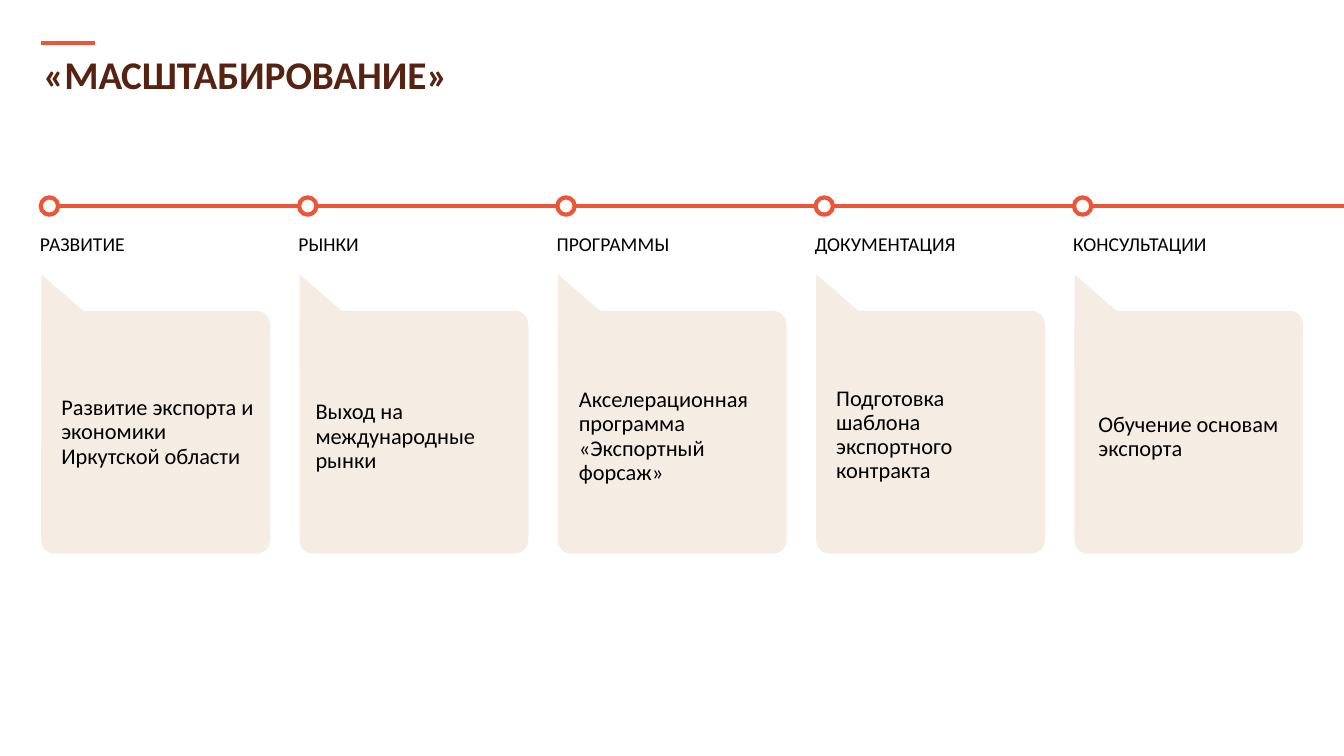
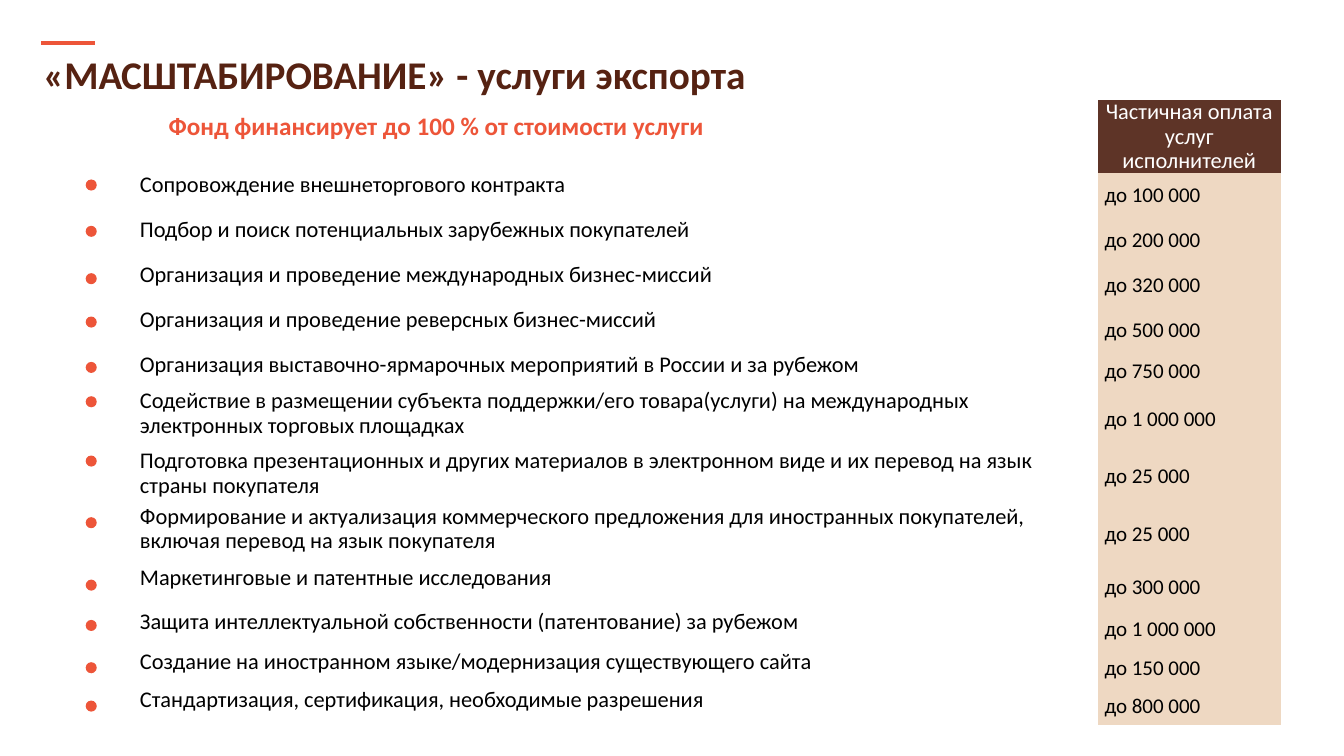
from dataclasses import dataclass

from pptx import Presentation
from pptx.dml.color import RGBColor as Rgb
from pptx.enum.shapes import MSO_CONNECTOR as Connector, MSO_SHAPE as Shape
from pptx.enum.text import MSO_ANCHOR as Anchor, PP_ALIGN as Align
from pptx.oxml.ns import qn
from pptx.oxml.xmlchemy import OxmlElement
from pptx.util import Pt


# Colours, font and type sizes
@dataclass(frozen=True)
class Theme:
    font: str = "Calibri"
    accent: str = "ED5539"
    title: str = "562212"
    ink: str = "000000"
    white: str = "FFFFFF"
    card: str = "F5ECE3"
    header: str = "5E3427"
    amount: str = "EED8C2"
    title_size: float = 28
    subtitle_size: float = 18
    body_size: float = 16
    amount_size: float = 15
    label_size: float = 14
    line_width: float = 3
    spacing: float = 0.9


THEME = Theme()
NO_GRID_STYLE = "{2D5ABB26-0587-4C30-8999-92F81FD0307C}"


def apply(target, values):
    for name, value in values.items():
        setattr(target, name, value)


class Builder:
    """Holds the deck, the theme and the page being drawn."""

    def __init__(self, theme):
        self.theme = theme
        self.deck = Presentation()
        apply(self.deck, {"slide_width": Pt(960), "slide_height": Pt(540)})
        self.page = None

    def new_page(self, title):
        theme = self.theme
        self.page = self.deck.slides.add_slide(self.deck.slide_layouts[6])
        self.line(29.5, 31, 67.7, 31)
        self.text(title, 23.8, 36, 752, 36, size=theme.title_size,
                  color=theme.title, bold=True, spacing=theme.spacing)

    def fill_text(self, frame, text, size, color, bold=False, spacing=None,
                  align=Align.LEFT):
        """Fill a text frame, one paragraph for each line of text."""
        for index, words in enumerate(text.split("\n")):
            para = frame.add_paragraph() if index else frame.paragraphs[0]
            apply(para, {"alignment": align, "line_spacing": spacing})
            span = para.add_run()
            span.text = words
            apply(span.font, {"name": self.theme.font, "size": Pt(size), "bold": bold})
            span.font.color.rgb = Rgb.from_string(color)

    def text(self, text, left, top, width, height, anchor=Anchor.TOP, **style):
        box = self.page.shapes.add_textbox(Pt(left), Pt(top), Pt(width), Pt(height))
        apply(box.text_frame, {"word_wrap": True, "vertical_anchor": anchor})
        self.fill_text(box.text_frame, text, **style)

    def line(self, x1, y1, x2, y2):
        line = self.page.shapes.add_connector(
            Connector.STRAIGHT, Pt(x1), Pt(y1), Pt(x2), Pt(y2))
        line.line.color.rgb = Rgb.from_string(self.theme.accent)
        line.line.width = Pt(self.theme.line_width)
        line._element.spPr.append(OxmlElement("a:effectLst"))

    def shape(self, kind, left, top, width, height, fill, outline=None, parent=None):
        shapes = (parent or self.page).shapes
        shape = shapes.add_shape(kind, Pt(left), Pt(top), Pt(width), Pt(height))
        shape.shadow.inherit = False
        shape.fill.solid()
        shape.fill.fore_color.rgb = Rgb.from_string(fill)
        if outline:
            shape.line.color.rgb = Rgb.from_string(outline)
            shape.line.width = Pt(self.theme.line_width)
        else:
            shape.line.fill.background()
        return shape

    def callout(self, left, top, width, height):
        """A rounded card with a pointer at its upper left corner."""
        color = self.theme.card
        group = self.page.shapes.add_group_shape()
        self.shape(Shape.RIGHT_TRIANGLE, left, top - 26, 75.6, 65.5, color, parent=group)
        card = self.shape(Shape.ROUNDED_RECTANGLE, left, top, width, height,
                          color, parent=group)
        card.adjustments[0] = 0.06

    def table(self, left, top, widths, heights):
        frame = self.page.shapes.add_table(
            len(heights), len(widths), Pt(left), Pt(top), Pt(sum(widths)), Pt(sum(heights)))
        table = frame.table
        apply(table, {"first_row": False, "horz_banding": False})
        table._tbl.tblPr.find(qn("a:tableStyleId")).text = NO_GRID_STYLE
        for column, width in zip(table.columns, widths):
            column.width = Pt(width)
        for row, height in zip(table.rows, heights):
            row.height = Pt(height)
        return table

    def cell(self, cell, text="", fill=None, anchor=Anchor.TOP, **style):
        apply(cell, {"margin_left": Pt(5), "margin_right": Pt(5), "margin_top": 0,
                     "margin_bottom": 0, "vertical_anchor": anchor})
        if fill:
            cell.fill.solid()
            cell.fill.fore_color.rgb = Rgb.from_string(fill)
        else:
            cell.fill.background()
        if text:
            self.fill_text(cell.text_frame, text, spacing=self.theme.spacing, **style)


# Stage label, card text, text indent, text width, text middle
STAGES = [
    ("РАЗВИТИЕ", "Развитие экспорта и экономики\nИркутской области", 7.2, 156, 309),
    ("РЫНКИ", "Выход на международные рынки", 4.3, 156, 312),
    ("ПРОГРАММЫ", "Акселерационная программа «Экспортный форсаж»", 7.9, 148, 312),
    ("ДОКУМЕНТАЦИЯ", "Подготовка шаблона экспортного контракта", 7.2, 148, 311),
    ("КОНСУЛЬТАЦИИ", "Обучение основам экспорта", 10, 146, 312.5),
]

# Service, payment limit, row height, top of the dot
SERVICES = [
    ("Сопровождение внешнеторгового контракта", "до 100 000", 32.2, 128.2),
    ("Подбор и поиск потенциальных зарубежных покупателей", "до 200 000", 32.2, 161.3),
    ("Организация и проведение международных бизнес-миссий", "до 320 000", 32.2, 195.1),
    ("Организация и проведение реверсных бизнес-миссий", "до 500 000", 32.2, 226.1),
    ("Организация выставочно-ярмарочных мероприятий в России и за рубежом",
     "до 750 000", 25.6, 258.5),
    ("Содействие в размещении субъекта поддержки/его товара(услуги) на международных "
     "электронных торговых площадках", "до 1 000 000", 42.9, 283),
    ("Подготовка презентационных и других материалов в электронном виде и их перевод "
     "на язык страны покупателя", "до 25 000", 39.5, 325.4),
    ("Формирование и актуализация коммерческого предложения для иностранных "
     "покупателей, включая перевод на язык покупателя", "до 25 000", 43.8, 369.4),
    ("Маркетинговые и патентные исследования", "до 300 000", 31.5, 414),
    ("Защита интеллектуальной собственности (патентование) за рубежом",
     "до 1 000 000", 28.5, 442.8),
    ("Создание на иностранном языке/модернизация существующего сайта",
     "до 150 000", 27, 473),
    ("Стандартизация, сертификация, необходимые разрешения", "до 800 000", 27, 500.4),
]


def stages_page(builder):
    theme = builder.theme
    builder.new_page("«МАСШТАБИРОВАНИЕ»")
    builder.line(36.7, 147.4, 960, 147.4)
    for index, (label, text, indent, width, middle) in enumerate(STAGES):
        left = 29.5 + 184.5 * index
        builder.shape(Shape.OVAL, left - 0.4, 141, 12.4, 12.4, theme.white, theme.accent)
        builder.text(label, left - 8, 162, 150, 24.5, size=theme.label_size, color=theme.ink)
        builder.callout(left, 222, 163.4, 173.5)
        builder.text(text, left + indent, middle - 30, width, 60, Anchor.MIDDLE,
                     size=theme.body_size, color=theme.ink, spacing=theme.spacing)


def services_page(builder):
    theme = builder.theme
    builder.new_page("«МАСШТАБИРОВАНИЕ» - услуги экспорта")
    builder.text("Фонд финансирует до 100 % от стоимости услуги", 71.8, 75, 479.5, 29,
                 size=theme.subtitle_size, color=theme.accent, bold=True, align=Align.CENTER)

    # Table of services and limits
    table = builder.table(95, 71.4, [689, 131], [52.2] + [row[2] for row in SERVICES])
    builder.cell(table.cell(0, 0))
    builder.cell(table.cell(0, 1), "Частичная оплата услуг исполнителей", theme.header,
                 Anchor.MIDDLE, size=theme.body_size, color=theme.white, align=Align.CENTER)
    for row, (service, limit, _, dot_top) in enumerate(SERVICES, 1):
        builder.cell(table.cell(row, 0), service, size=theme.body_size, color=theme.ink)
        builder.cell(table.cell(row, 1), limit, theme.amount, Anchor.MIDDLE,
                     size=theme.amount_size, color=theme.ink)
        builder.shape(Shape.OVAL, 61.2, dot_top, 7.9, 7.9, theme.accent)


def main():
    builder = Builder(THEME)
    stages_page(builder)
    services_page(builder)
    builder.deck.save("out.pptx")


if __name__ == "__main__":
    main()
